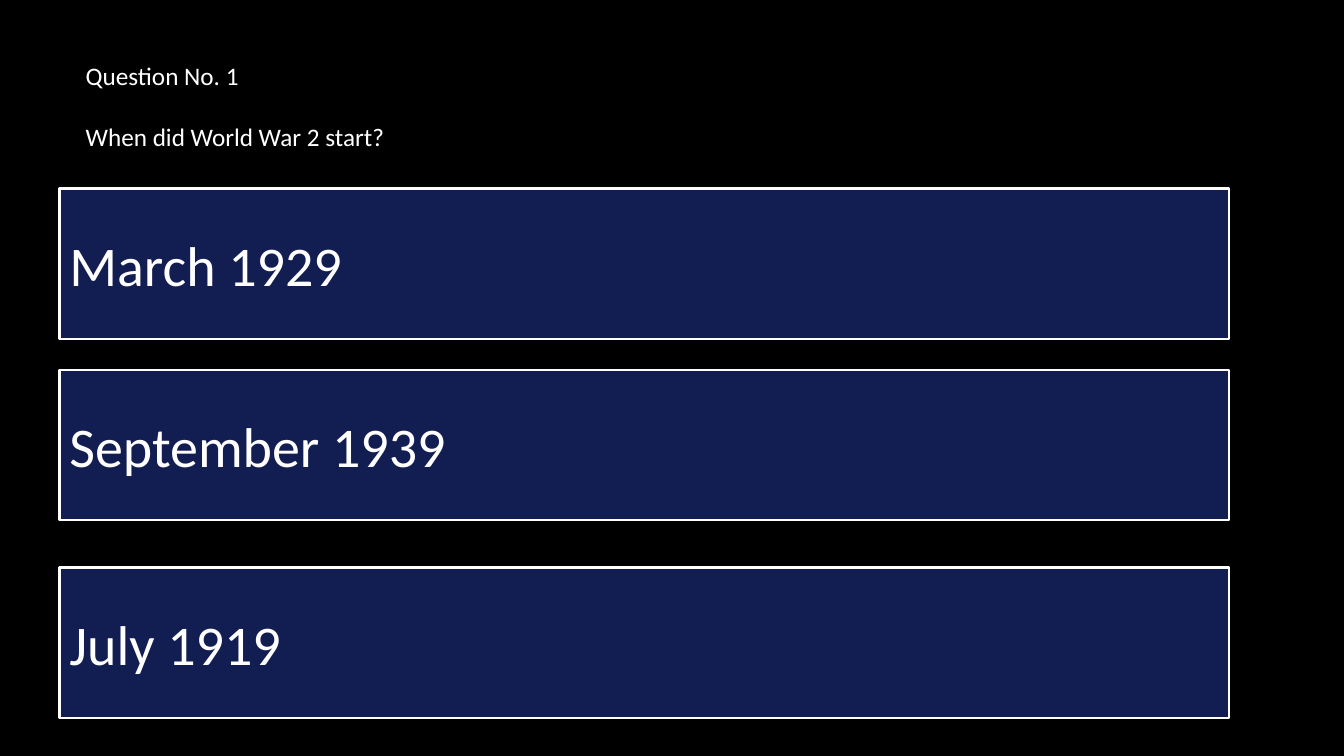
from pptx import Presentation
from pptx import util as u
from pptx.dml.color import RGBColor
from pptx.enum import shapes, text

BLACK = RGBColor(0x00, 0x00, 0x00)
WHITE = RGBColor(0xFF, 0xFF, 0xFF)
NAVY = RGBColor(0x12, 0x1D, 0x51)

QUESTION = ["Question No. 1", "When did World War 2 start?"]
ANSWERS = {"March 1929": 1.87, "September 1939": 3.67, "July 1919": 5.63}
ANSWER_LEFT, ANSWER_WIDTH, ANSWER_HEIGHT = 0.59, 11.6, 1.49


def format_paragraph(p, size):
    """Apply the quiz text style to a paragraph."""
    p.alignment = text.PP_ALIGN.LEFT
    for name, value in {"name": "Calibri", "size": u.Pt(size)}.items():
        setattr(p.font, name, value)
    p.font.color.rgb = WHITE


def add_question(s, lines, box):
    """Place the question number and wording in the title."""
    sp = s.shapes.title
    sp.left, sp.top, sp.width, sp.height = map(u.Inches, box)
    tf = sp.text_frame
    for name, value in {"word_wrap": True,
                        "auto_size": text.MSO_AUTO_SIZE.NONE,
                        "vertical_anchor": text.MSO_ANCHOR.TOP}.items():
        setattr(tf, name, value)
    tf.text = "\n".join(lines)
    for p in tf.paragraphs:
        format_paragraph(p, 18)
    for p in tf.paragraphs[1:]:
        p.space_before = u.Pt(22)


def add_answer(s, answer, box):
    """Draw one answer bar filling its box."""
    sp = s.shapes.add_shape(shapes.MSO_SHAPE.RECTANGLE, *map(u.Inches, box))
    sp.shadow.inherit = False
    sp.fill.solid()
    sp.fill.fore_color.rgb = NAVY
    sp.line.color.rgb = WHITE
    sp.line.width = u.Pt(1.5)
    tf = sp.text_frame
    tf.word_wrap = True
    tf.vertical_anchor = text.MSO_ANCHOR.MIDDLE
    tf.text = answer
    format_paragraph(tf.paragraphs[0], 40)


def main():
    """Build the quiz slide."""
    prs = Presentation()
    prs.slide_width, prs.slide_height = u.Inches(13.33), u.Inches(7.5)
    s = prs.slides.add_slide(prs.slide_layouts.get_by_name("Title Only"))
    s.background.fill.solid()
    s.background.fill.fore_color.rgb = BLACK
    add_question(s, QUESTION, (0.75, 0.55, 10.75, 1.01))
    for answer, top in ANSWERS.items():
        add_answer(s, answer, (ANSWER_LEFT, top, ANSWER_WIDTH, ANSWER_HEIGHT))
    prs.save("out.pptx")


if __name__ == "__main__":
    main()
